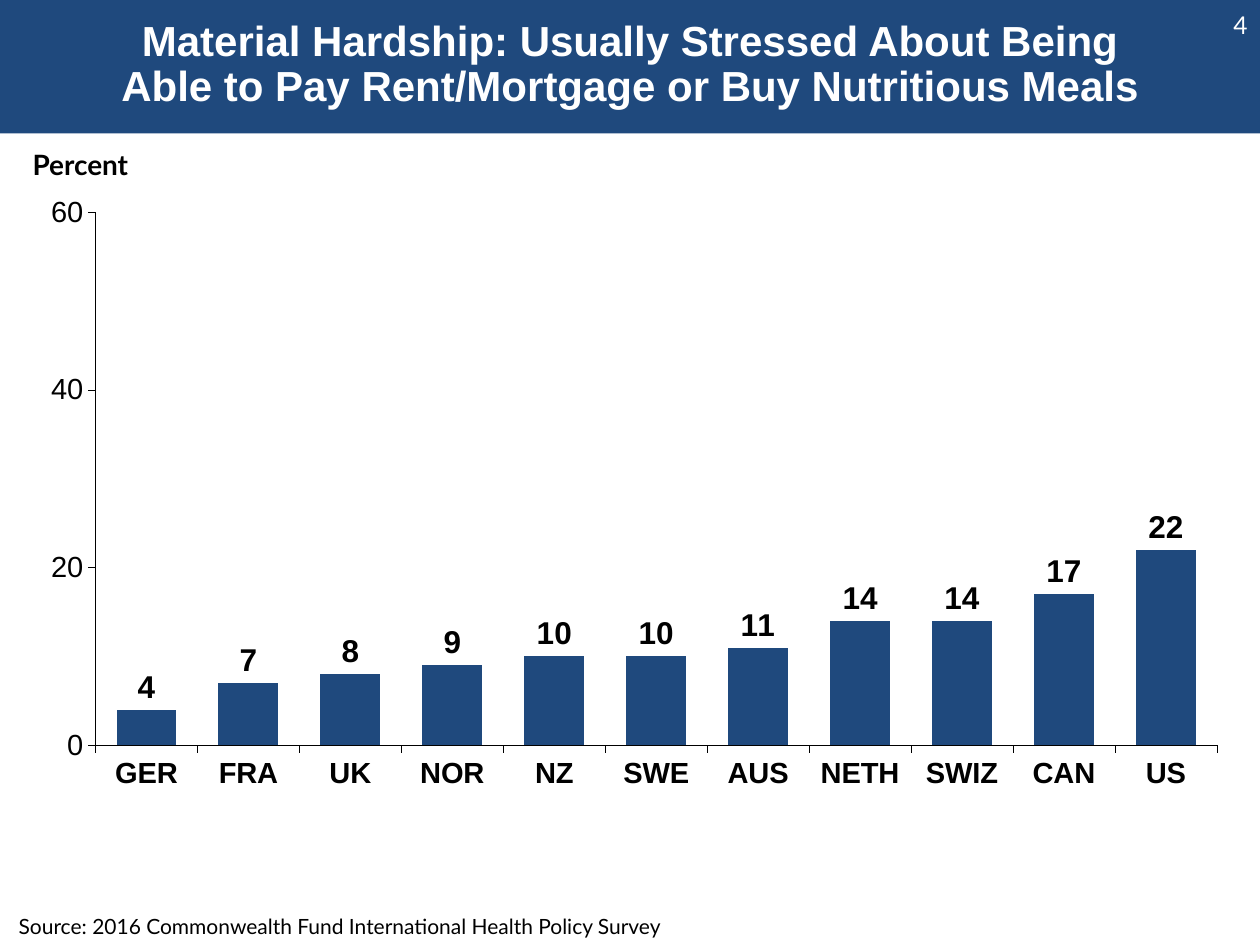
import lxml.etree
import pptx
import pptx.chart.data
import pptx.dml.color
import pptx.enum.chart
import pptx.enum.shapes
import pptx.enum.text
import pptx.oxml
import pptx.oxml.ns
import pptx.util

Inches = pptx.util.Inches
Pt = pptx.util.Pt
RGBColor = pptx.dml.color.RGBColor
ALIGN = pptx.enum.text.PP_ALIGN
ANCHOR = pptx.enum.text.MSO_ANCHOR

NAVY = RGBColor(0x1F, 0x49, 0x7D)
WHITE = RGBColor(0xFF, 0xFF, 0xFF)
BLACK = RGBColor(0, 0, 0)

STRESSED = {"GER": 4, "FRA": 7, "UK": 8, "NOR": 9, "NZ": 10, "SWE": 10,
            "AUS": 11, "NETH": 14, "SWIZ": 14, "CAN": 17, "US": 22}


class SlideBuilder:
    heading_font = "Arial"
    body_font = "Lato"

    def __init__(self, page):
        self.page = page

    def set_font(self, font, name, size, color=BLACK, bold=False):
        font.name = name
        font.size = Pt(size)
        font.bold = bold
        font.color.rgb = color

    def band(self, left, top, width, height, color):
        band = self.page.shapes.add_shape(
            pptx.enum.shapes.MSO_SHAPE.RECTANGLE,
            Inches(left), Inches(top), Inches(width), Inches(height))
        band.shadow.inherit = False
        band.fill.solid()
        band.fill.fore_color.rgb = color
        band.line.fill.background()

    def text(self, words, left, top, width, height, size, font=None,
             color=BLACK, bold=False, align=ALIGN.LEFT, anchor=ANCHOR.TOP,
             line_spacing=None):
        box = self.page.shapes.add_textbox(
            Inches(left), Inches(top), Inches(width), Inches(height))
        frame = box.text_frame
        frame.word_wrap = True
        frame.vertical_anchor = anchor
        para = frame.paragraphs[0]
        para.text = words
        para.alignment = align
        para.line_spacing = line_spacing
        self.set_font(para.font, font or self.body_font, size, color, bold)

    def column_chart(self, values, left, top, width, height, plot_area):
        data = pptx.chart.data.CategoryChartData(number_format="0")
        data.categories = list(values)
        data.add_series("Series 1", list(values.values()))
        chart = self.page.shapes.add_chart(
            pptx.enum.chart.XL_CHART_TYPE.COLUMN_CLUSTERED,
            Inches(left), Inches(top), Inches(width), Inches(height),
            data).chart
        chart.has_legend = False
        chart.has_title = False
        self.set_font(chart.font, self.heading_font, 11)

        # Columns and their labels
        plot = chart.plots[0]
        plot.vary_by_categories = False
        plot.gap_width = 70
        plot.overlap = -10
        fill = plot.series[0].format.fill
        fill.solid()
        fill.fore_color.rgb = NAVY
        plot.has_data_labels = True
        labels = plot.data_labels
        labels.show_value = True
        labels.number_format = "0"
        labels.number_format_is_linked = False
        labels.position = pptx.enum.chart.XL_LABEL_POSITION.OUTSIDE_END
        self.set_font(labels.font, self.heading_font, 18, bold=True)

        # Axes
        for axis, bold in ((chart.category_axis, True),
                           (chart.value_axis, False)):
            axis.has_major_gridlines = False
            axis.major_tick_mark = pptx.enum.chart.XL_TICK_MARK.OUTSIDE
            axis.minor_tick_mark = pptx.enum.chart.XL_TICK_MARK.NONE
            axis.format.line.color.rgb = BLACK
            axis.format.line.width = Pt(0.3)
            self.set_font(axis.tick_labels.font, self.heading_font, 16.6,
                          bold=bold)
        scale = chart.value_axis
        scale.minimum_scale, scale.maximum_scale = 0, 60
        scale.major_unit = 20
        scale.tick_labels.number_format = "0"
        scale.tick_labels.number_format_is_linked = False
        self.place_plot(chart, plot_area)

    def place_plot(self, chart, plot_area):
        qn = pptx.oxml.ns.qn
        area = chart.element.find(".//" + qn("c:plotArea"))
        for old_layout in area.findall(qn("c:layout")):
            area.remove(old_layout)
        layout = lxml.etree.Element(qn("c:layout"))
        manual = lxml.etree.SubElement(layout, qn("c:manualLayout"))
        settings = [("layoutTarget", "inner"), ("xMode", "edge"),
                    ("yMode", "edge"), *zip("xywh", plot_area)]
        for tag, value in settings:
            lxml.etree.SubElement(manual, qn("c:" + tag), val=str(value))
        area.insert(0, layout)


def main():
    deck = pptx.Presentation()
    deck.slide_width, deck.slide_height = Inches(10), Inches(7.5)
    slide = SlideBuilder(deck.slides.add_slide(deck.slide_layouts[6]))

    # Header band with page number and title
    slide.band(0, 0, 10, 1.06, NAVY)
    slide.text("4", 7.67, 0, 2.33, 0.4, 14, color=WHITE,
               align=ALIGN.RIGHT, anchor=ANCHOR.MIDDLE)
    slide.text("Material Hardship: Usually Stressed About Being Able to Pay "
               "Rent/Mortgage or Buy Nutritious Meals",
               0.69, 0.15, 8.62, 0.74, 24, slide.heading_font, WHITE, True,
               ALIGN.CENTER, ANCHOR.MIDDLE, 0.9)

    # Chart with its unit label
    slide.column_chart(STRESSED, 0.26, 1.41, 9.4, 5.18,
                       (0.054, 0.053, 0.947, 0.817))
    slide.text("Percent", 0.16, 1.12, 8.61, 0.37, 16, bold=True)

    # Source line
    slide.text("Source: 2016 Commonwealth Fund International Health Policy "
               "Survey", 0.05, 7.2, 8.13, 0.3, 12)

    deck.save("out.pptx")


if __name__ == "__main__":
    main()
